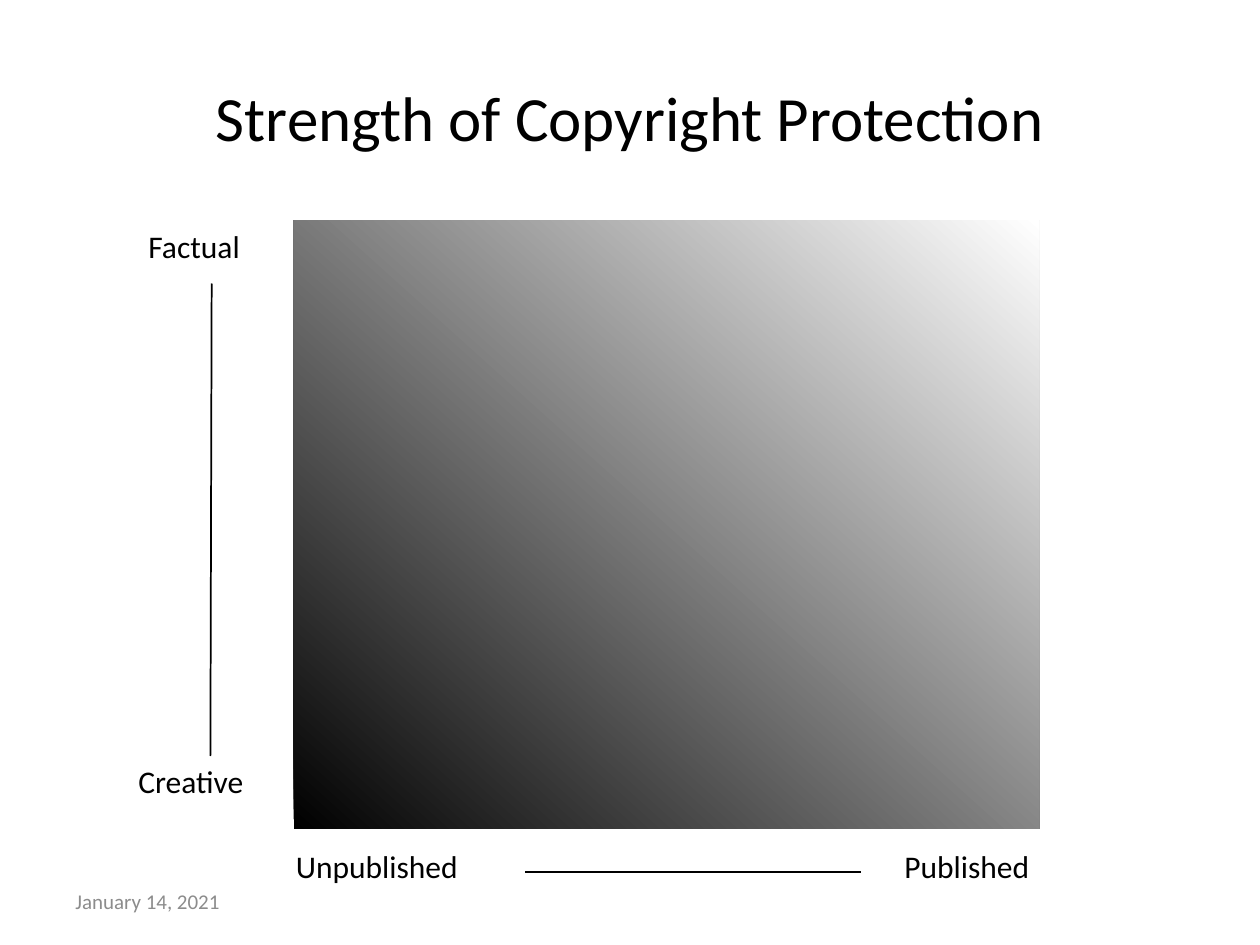
from lxml import etree
from pptx import Presentation
from pptx.dml.color import RGBColor
from pptx.enum.shapes import MSO_CONNECTOR, MSO_SHAPE
from pptx.enum.text import MSO_ANCHOR, PP_ALIGN
from pptx.oxml.ns import qn
from pptx.util import Inches, Pt

LEFT, CENTER = PP_ALIGN.LEFT, PP_ALIGN.CENTER
TOP, MIDDLE = MSO_ANCHOR.TOP, MSO_ANCHOR.MIDDLE
STRAIGHT = MSO_CONNECTOR.STRAIGHT
RECTANGLE = MSO_SHAPE.RECTANGLE
FONT = "Calibri"
BLACK, WHITE, GRAY = "000000", "FFFFFF", "8C8C8C"


def rgb(value):
    return RGBColor.from_string(value)


def add_text(s, text, x, y, w, h, size=18, color=BLACK, align=LEFT,
             anchor=TOP, tab=None):
    sp = s.shapes.add_textbox(Inches(x), Inches(y), Inches(w), Inches(h))
    tf = sp.text_frame
    tf.word_wrap = True
    tf.vertical_anchor = anchor
    p = tf.paragraphs[0]
    p.alignment = align
    if tab is not None:
        tabs = etree.SubElement(p._p.get_or_add_pPr(), qn("a:tabLst"))
        etree.SubElement(tabs, qn("a:tab"), pos=str(Inches(tab)), algn="l")
    r = p.add_run()
    r.text = text
    r.font.name = FONT
    r.font.size = Pt(size)
    r.font.color.rgb = rgb(color)
    return sp


def add_line(s, x1, y1, x2, y2):
    line = s.shapes.add_connector(
        STRAIGHT, Inches(x1), Inches(y1), Inches(x2), Inches(y2))
    line.line.color.rgb = rgb(BLACK)
    line.line.width = Pt(1)
    etree.SubElement(line._element.spPr, qn("a:effectLst"))


def add_gradient(s, x, y, w, h):
    sp = s.shapes.add_shape(
        RECTANGLE, Inches(x), Inches(y), Inches(w), Inches(h))
    sp.shadow.inherit = False
    sp.line.fill.background()
    sp.fill.gradient()
    sp.fill.gradient_angle = 48
    for stop, position, color in zip(
            sp.fill.gradient_stops, (0, 1), (BLACK, WHITE)):
        stop.position = position
        stop.color.rgb = rgb(color)


def add_vertical_axis(s, x, y, w, h):
    add_text(s, "Factual", x + 0.08, y, w - 0.08, 0.5)
    add_text(s, "Creative", x, y + h - 0.5, w, 0.5)
    add_line(s, x + 0.68, y + 0.5, x + 0.67, y + h - 0.5)


def add_horizontal_axis(s, x, y, w, h):
    add_text(s, "Unpublished\tPublished", x, y, w, h, tab=4.83)
    add_line(s, x + 4.58, y + 0.25, x + 1.92, y + 0.25)


def main():
    prs = Presentation()
    prs.slide_width, prs.slide_height = Inches(10), Inches(7.5)
    s = prs.slides.add_slide(prs.slide_layouts[6])
    add_text(s, "Strength of Copyright Protection", 0.5, 0.3, 9, 1.25,
             size=36, align=CENTER, anchor=MIDDLE)
    add_text(s, "January 14, 2021", 0.5, 6.95, 2.33, 0.4,
             size=12, color=GRAY, anchor=MIDDLE)
    add_horizontal_axis(s, 2.25, 6.67, 6.1, 0.4)
    add_vertical_axis(s, 1, 1.75, 1.34, 4.75)
    add_gradient(s, 2.33, 1.75, 5.92, 4.83)
    prs.save("out.pptx")


if __name__ == "__main__":
    main()
